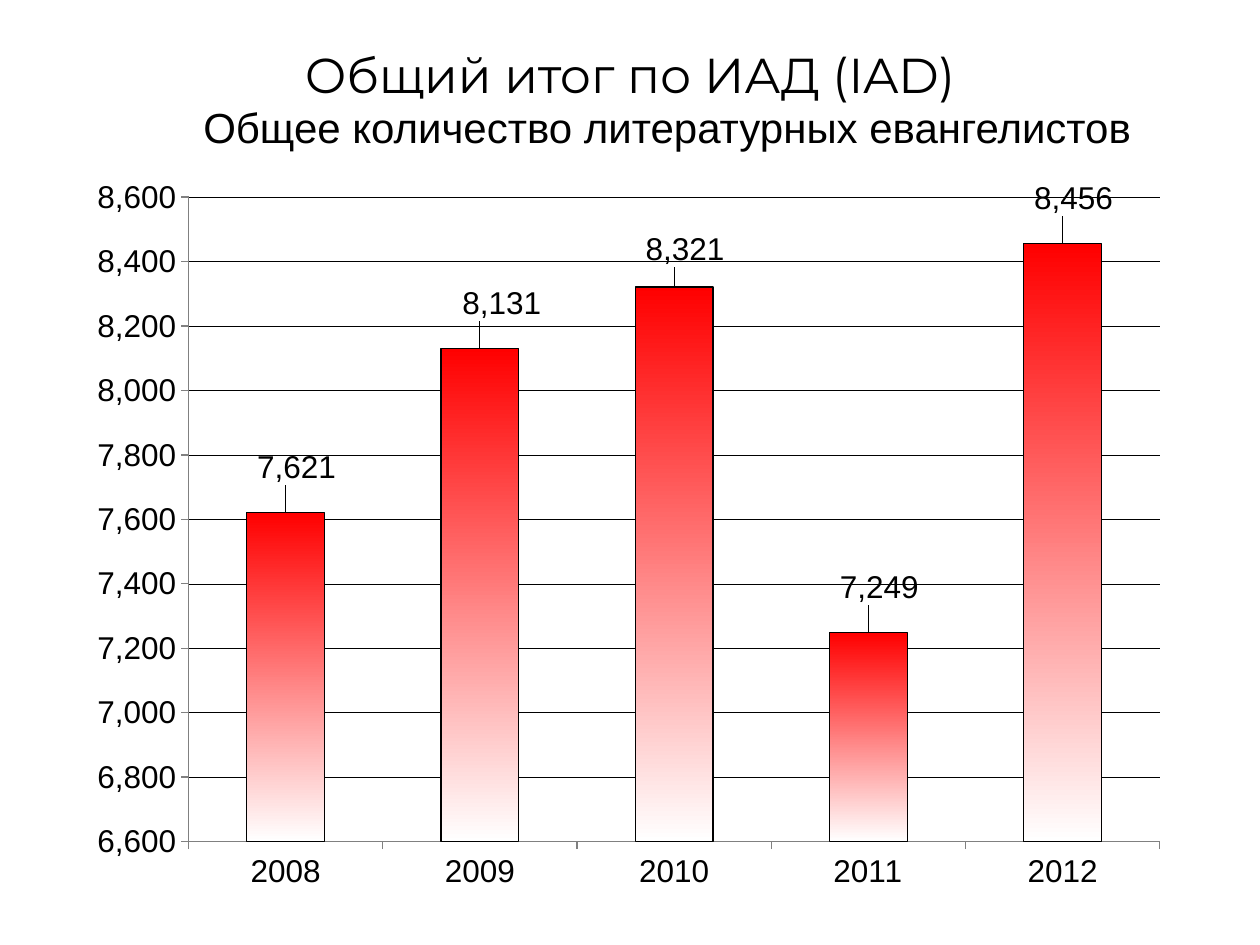
"""Build a slide with a column chart of literature evangelist totals by year."""
from lxml.etree import SubElement
from pptx import Presentation
from pptx.chart.data import CategoryChartData
from pptx.dml.color import RGBColor
from pptx.enum.chart import XL_CHART_TYPE as CT, XL_LABEL_POSITION as LP, XL_TICK_MARK as TM
from pptx.enum.text import MSO_ANCHOR, PP_ALIGN
from pptx.oxml.ns import qn
from pptx.util import Inches, Pt

BLACK = RGBColor(0x00, 0x00, 0x00)
GRAY = RGBColor(0x80, 0x80, 0x80)
RED = RGBColor(0xFF, 0x00, 0x00)
WHITE = RGBColor(0xFF, 0xFF, 0xFF)

HEADINGS = [
    ("Общий итог по ИАД (IAD)", "Montserrat", 28, (0.5, 0.3, 9, 1.25)),
    ("Общее количество литературных евангелистов", "Arial", 24, (1.42, 0.76, 7.75, 0.5)),
]
TOTALS = {"2008": 7621, "2009": 8131, "2010": 8321, "2011": 7249, "2012": 8456}
LABEL_SHIFTS = [(0.01, -0.03), (0.02, -0.03), (0.01, -0.02), (0.01, -0.03), (0.01, -0.03)]
CHART_BOX = (0.62, 1.33, 8.76, 5.88)
PLOT_LAYOUT = {"layoutTarget": "inner", "xMode": "edge", "yMode": "edge",
               "x": 0.1, "y": 0.04, "w": 0.88, "h": 0.87}
NUMBER_FORMAT = "#,##0"


def add_heading(s, text, font, size, box):
    tf = s.shapes.add_textbox(*map(Inches, box)).text_frame
    tf.word_wrap = True
    tf.vertical_anchor = MSO_ANCHOR.TOP
    p = tf.paragraphs[0]
    p.alignment = PP_ALIGN.CENTER
    r = p.add_run()
    r.text = text
    r.font.name, r.font.size = font, Pt(size)
    r.font.color.rgb = BLACK


def fill_layout(layout, values):
    manual = SubElement(layout, qn("c:manualLayout"))
    for tag, value in values.items():
        SubElement(manual, qn(f"c:{tag}")).set("val", str(value))


def style_axis(axis):
    axis.major_tick_mark = TM.OUTSIDE
    axis.minor_tick_mark = TM.NONE
    axis.format.line.color.rgb = GRAY
    axis.format.line.width = Pt(0.75)


def add_totals_chart(s):
    data = CategoryChartData(number_format=NUMBER_FORMAT)
    data.categories = list(TOTALS)
    data.add_series("Series 1", list(TOTALS.values()))
    chart = s.shapes.add_chart(CT.COLUMN_CLUSTERED, *map(Inches, CHART_BOX), data).chart
    chart.has_legend = chart.has_title = False
    chart.font.name, chart.font.size = "Arial", Pt(18)
    chart.font.color.rgb = BLACK

    style_axis(chart.category_axis)
    axis = chart.value_axis
    style_axis(axis)
    axis.minimum_scale, axis.maximum_scale, axis.major_unit = 6600, 8600, 200
    axis.tick_labels.number_format = NUMBER_FORMAT
    axis.tick_labels.number_format_is_linked = False
    axis.has_major_gridlines = True
    axis.major_gridlines.format.line.color.rgb = BLACK
    axis.major_gridlines.format.line.width = Pt(0.25)

    plot = chart.plots[0]
    plot.vary_by_categories = False
    plot.gap_width = 150
    series = plot.series[0]
    fill = series.format.fill
    fill.gradient()
    fill.gradient_angle = 270
    for stop, color in zip(fill.gradient_stops, (RED, WHITE)):
        stop.color.rgb = color
    series.format.line.color.rgb = BLACK
    series.format.line.width = Pt(0.75)

    labels = series.data_labels
    labels.show_value = True
    labels.number_format = NUMBER_FORMAT
    labels.number_format_is_linked = False
    for i in range(len(TOTALS)):
        series.points[i].data_label.position = LP.OUTSIDE_END
    root = chart._chartSpace
    for label, (x, y) in zip(root.iter(qn("c:dLbl")), LABEL_SHIFTS):
        layout = SubElement(label, qn("c:layout"))
        label[0].addnext(layout)
        fill_layout(layout, {"x": x, "y": y})

    area = root.find(f".//{qn('c:plotArea')}")
    layout = area.find(qn("c:layout"))
    if layout is None:
        layout = SubElement(area, qn("c:layout"))
        area.insert(0, layout)
    fill_layout(layout, PLOT_LAYOUT)


def main():
    prs = Presentation()
    prs.slide_width, prs.slide_height = Inches(10), Inches(7.5)
    s = prs.slides.add_slide(prs.slide_layouts[6])
    add_totals_chart(s)
    for heading in HEADINGS:
        add_heading(s, *heading)
    prs.save("out.pptx")


if __name__ == "__main__":
    main()
